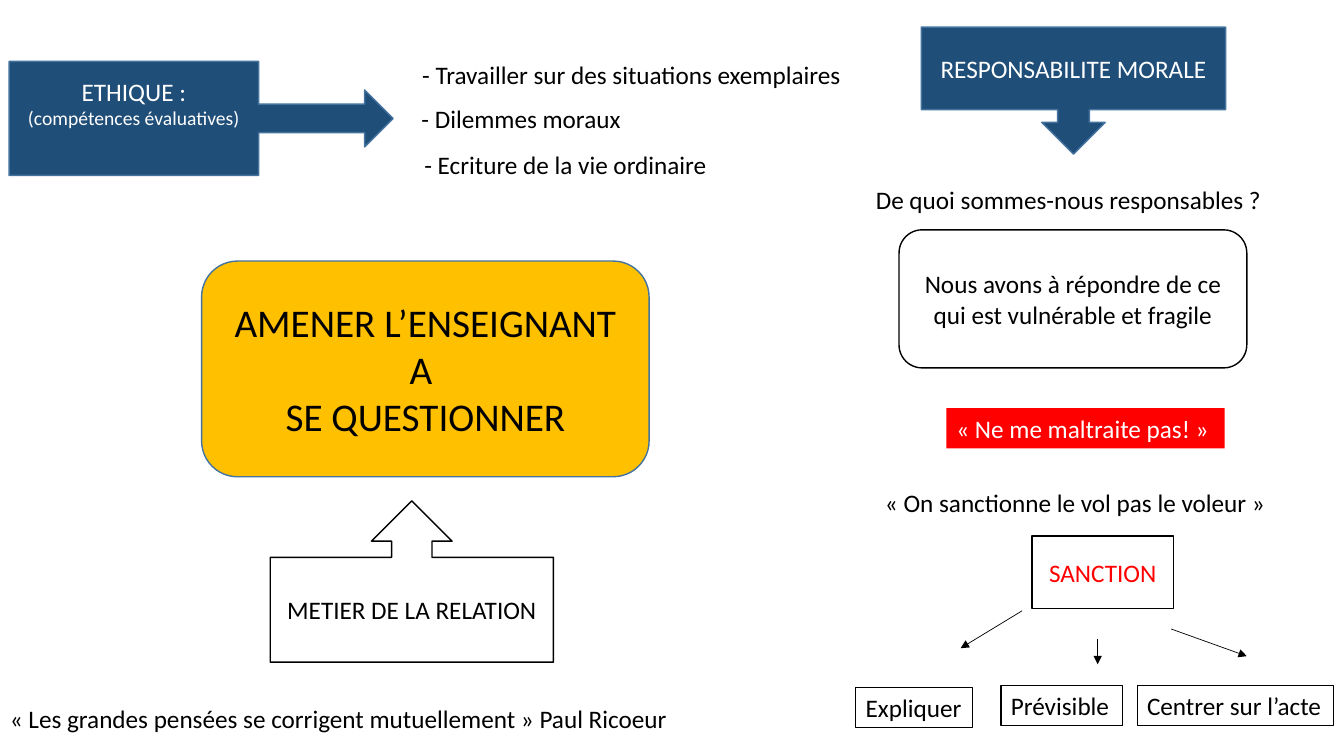
"""Builds a slide on ethics, moral responsibility and the teacher's questioning."""
from dataclasses import dataclass
from typing import Optional

import pptx
import pptx.dml.color
import pptx.enum.shapes
import pptx.enum.text
import pptx.oxml
import pptx.oxml.ns
import pptx.slide
import pptx.util

Pt = pptx.util.Pt
Shape = pptx.enum.shapes.MSO_SHAPE
Align = pptx.enum.text.PP_ALIGN
Anchor = pptx.enum.text.MSO_ANCHOR


@dataclass(frozen=True)
class Theme:
    font: str = "Calibri"
    body: float = 18
    detail: float = 14
    headline: float = 28
    navy: str = "1F4E79"
    blue: str = "43739E"
    amber: str = "FFC000"
    red: str = "FF0000"
    black: str = "000000"
    white: str = "FFFFFF"
    outline: float = 1
    thin_outline: float = 0.75
    arrow: float = 0.5
    line_height: float = 28.8


THEME = Theme()


@dataclass(frozen=True)
class Label:
    text: str
    left: float
    top: float
    width: float
    align: Align = Align.LEFT
    wrap: bool = True
    color: str = THEME.black
    fill: Optional[str] = None
    line: Optional[str] = None


@dataclass(frozen=True)
class Panel:
    kind: Shape
    text: str
    left: float
    top: float
    width: float
    height: float
    fill: str = THEME.white
    line: str = THEME.black
    color: str = THEME.black
    size: float = THEME.body
    detail: str = ""
    bottom_inset: float = 3.6


@dataclass(frozen=True)
class Arrow:
    start: tuple[float, float]
    end: tuple[float, float]


PANELS = (
    Panel(Shape.RIGHT_ARROW_CALLOUT, "ETHIQUE :", 6.5, 43.9, 274.3, 81.4,
          THEME.navy, THEME.blue, THEME.white,
          detail="(compétences évaluatives)", bottom_inset=25.6),
    Panel(Shape.DOWN_ARROW_CALLOUT, "RESPONSABILITE MORALE", 658.1, 19.4, 217.4, 90.7,
          THEME.navy, THEME.blue, THEME.white),
    Panel(Shape.ROUNDED_RECTANGLE, "Nous avons à répondre de ce qui est vulnérable et fragile",
          642.2, 164.2, 248.4, 98.6),
    Panel(Shape.UP_ARROW_CALLOUT, "METIER DE LA RELATION", 193, 357.8, 202.3, 115.2),
    Panel(Shape.ROUNDED_RECTANGLE, "AMENER L’ENSEIGNANT\nA \nSE QUESTIONNER",
          144, 186.5, 319.7, 154.1, THEME.amber, THEME.blue, size=THEME.headline),
    Panel(Shape.FLOWCHART_PROCESS, "SANCTION", 737.3, 383, 100.8, 51.8, color=THEME.red),
)

LABELS = (
    Label("- Travailler sur des situations exemplaires", 294.5, 38.9, 316.8, wrap=False),
    Label("- Dilemmes moraux", 293, 70.6, 158.4, Align.CENTER, wrap=False),
    Label("- Ecriture de la vie ordinaire", 294.5, 103, 218.9, Align.CENTER, wrap=False),
    Label("De quoi sommes-nous responsables ?", 618.5, 128.2, 295.9),
    Label("« Ne me maltraite pas! »", 676.1, 291.6, 198.7, color=THEME.white, fill=THEME.red),
    Label("« On sanctionne le vol pas le voleur »", 625, 344.2, 301),
    Label("« Les grandes pensées se corrigent mutuellement » Paul Ricoeur", 0, 499, 568.8),
    Label("Expliquer", 611.3, 491, 83.5, line=THEME.black),
    Label("Prévisible", 715, 489.6, 87.1, line=THEME.black),
    Label("Centrer sur l’acte", 812.2, 489.6, 140.4, line=THEME.black),
)

ARROWS = (
    Arrow((730.1, 436.3), (686.2, 463)),
    Arrow((836.6, 449.3), (890.6, 468.7)),
    Arrow((784.1, 456.5), (784.1, 474.5)),
)


def rgb(color: str) -> pptx.dml.color.RGBColor:
    """Turn a hex string into a colour."""
    return pptx.dml.color.RGBColor.from_string(color)


def write(para, text: str, size: float, color: str, align: Align) -> None:
    """Fill a paragraph and format it."""
    para.text = text
    para.alignment = align
    para.font.name = THEME.font
    para.font.size = Pt(size)
    para.font.color.rgb = rgb(color)


def add_panel(page: pptx.slide.Slide, panel: Panel) -> None:
    """Draw an outlined shape with centred text."""
    shape = page.shapes.add_shape(
        panel.kind, Pt(panel.left), Pt(panel.top), Pt(panel.width), Pt(panel.height))
    shape.shadow.inherit = False
    shape.fill.solid()
    shape.fill.fore_color.rgb = rgb(panel.fill)
    shape.line.color.rgb = rgb(panel.line)
    shape.line.width = Pt(THEME.outline)
    frame = shape.text_frame
    frame.word_wrap = True
    frame.vertical_anchor = Anchor.MIDDLE
    frame.margin_bottom = Pt(panel.bottom_inset)
    write(frame.paragraphs[0], panel.text, panel.size, panel.color, Align.CENTER)
    if panel.detail:
        write(frame.add_paragraph(), panel.detail, THEME.detail, panel.color, Align.CENTER)


def add_label(page: pptx.slide.Slide, label: Label) -> None:
    """Draw a one-line text box, filled or outlined where asked."""
    box = page.shapes.add_textbox(
        Pt(label.left), Pt(label.top), Pt(label.width), Pt(THEME.line_height))
    if label.fill:
        box.fill.solid()
        box.fill.fore_color.rgb = rgb(label.fill)
    if label.line:
        box.line.color.rgb = rgb(label.line)
        box.line.width = Pt(THEME.thin_outline)
    box.text_frame.word_wrap = label.wrap
    write(box.text_frame.paragraphs[0], label.text, THEME.body, label.color, label.align)


def add_arrow(page: pptx.slide.Slide, arrow: Arrow) -> None:
    """Draw a thin line with a triangular head at its end."""
    connector = page.shapes.add_connector(
        pptx.enum.shapes.MSO_CONNECTOR.STRAIGHT,
        *(Pt(length) for length in arrow.start + arrow.end))
    connector.line.color.rgb = rgb(THEME.black)
    connector.line.width = Pt(THEME.arrow)
    namespace = pptx.oxml.ns.nsdecls("a")
    connector.line._get_or_add_ln().append(
        pptx.oxml.parse_xml(f'<a:tailEnd {namespace} type="triangle"/>'))
    connector._element.spPr.append(pptx.oxml.parse_xml(f"<a:effectLst {namespace}/>"))


def main() -> None:
    """Build and save the deck."""
    deck = pptx.Presentation()
    deck.slide_width, deck.slide_height = Pt(960), Pt(540)
    page = deck.slides.add_slide(deck.slide_layouts.get_by_name("Blank"))
    for panel in PANELS:
        add_panel(page, panel)
    for label in LABELS:
        add_label(page, label)
    for arrow in ARROWS:
        add_arrow(page, arrow)
    deck.save("out.pptx")


if __name__ == "__main__":
    main()
